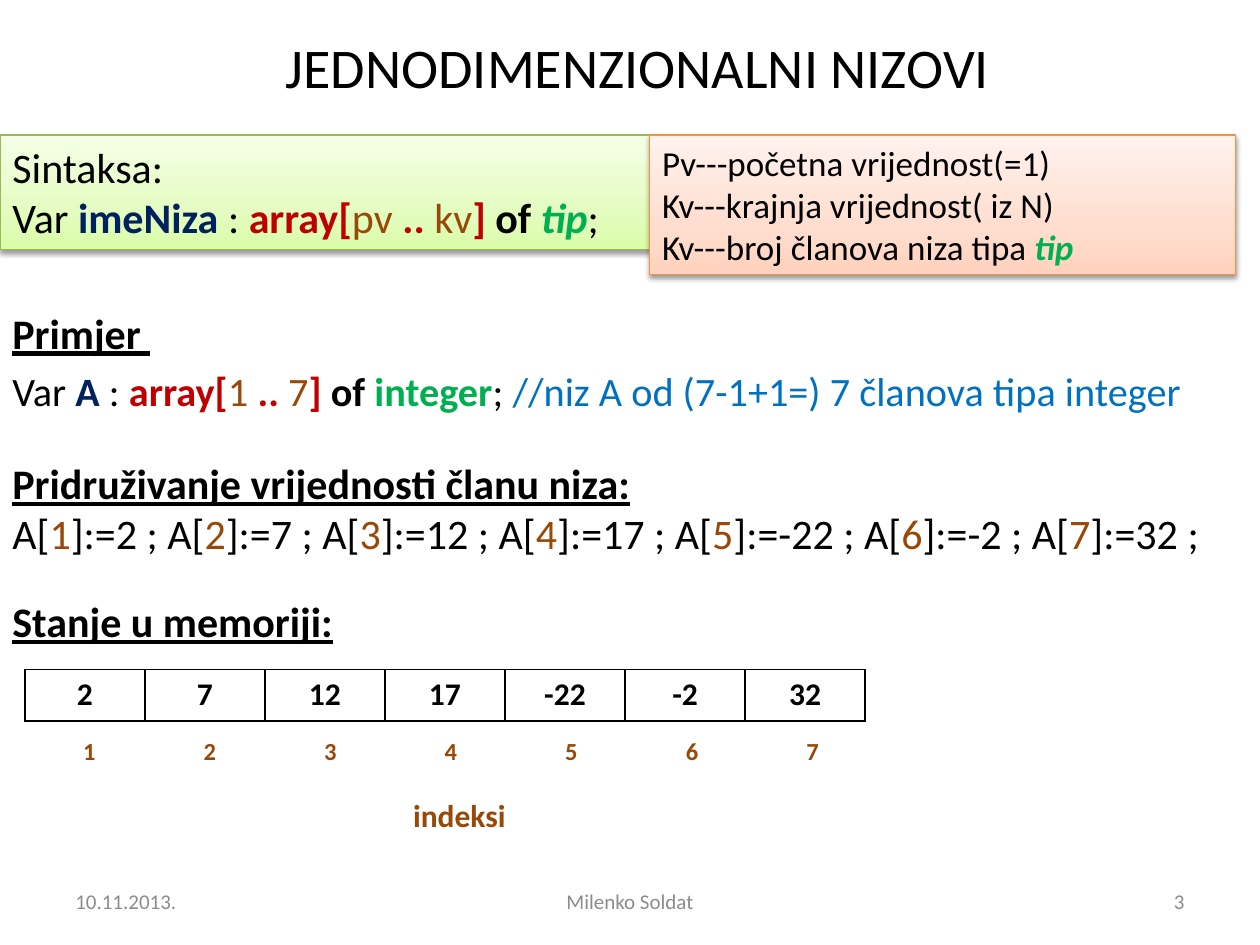
from dataclasses import dataclass

from lxml import etree
from pptx import Presentation
from pptx.dml.color import RGBColor
from pptx.enum.shapes import MSO_SHAPE
from pptx.enum.text import MSO_ANCHOR, MSO_AUTO_SIZE, PP_ALIGN
from pptx.oxml.ns import qn
from pptx.util import Cm, Pt

LEFT, CENTER, RIGHT = PP_ALIGN.LEFT, PP_ALIGN.CENTER, PP_ALIGN.RIGHT
MIDDLE, TOP = MSO_ANCHOR.MIDDLE, MSO_ANCHOR.TOP
GROW = MSO_AUTO_SIZE.SHAPE_TO_FIT_TEXT
RECTANGLE = MSO_SHAPE.RECTANGLE
TITLE_ONLY = 5


@dataclass(frozen=True)
class Theme:
    font: str = "Calibri"
    title: int = 32
    code: int = 24
    example: int = 23
    note: int = 20
    label: int = 18
    index: int = 14
    footer: int = 12
    black: str = "000000"
    gray: str = "8C8C8C"
    brown: str = "984807"
    green_line: str = "98B955"
    green_fill: tuple = ((0, "DAFDA7"), (35, "E4FCC2"), (100, "F5FFE7"))
    orange_line: str = "F69240"
    orange_fill: tuple = ((0, "FFD2BD"), (35, "FFDED0"), (100, "FFF2ED"))


THEME = Theme()

# Role of a run: colour and the letters b, i, u for bold, italic, underlined
ROLES = {
    "plain": (THEME.black, ""),
    "heading": (THEME.black, "bu"),
    "strong": (THEME.black, "b"),
    "name": ("002060", "b"),
    "keyword": ("C00000", "b"),
    "bound": (THEME.brown, ""),
    "index": (THEME.brown, "b"),
    "type": ("00B050", "b"),
    "any type": ("00B050", "bi"),
    "comment": ("0070C0", ""),
    "footer": (THEME.gray, ""),
}

VALUES = (2, 7, 12, 17, -22, -2, 32)


def format_run(run, role, size):
    color, marks = ROLES[role]
    font = run.font
    font.name, font.size = THEME.font, Pt(size)
    font.color.rgb = RGBColor.from_string(color)
    font.bold, font.italic, font.underline = "b" in marks, "i" in marks, "u" in marks


def write_text(text_frame, paragraphs, size, align=LEFT, anchor=TOP):
    """Each paragraph is a list of (text, role) runs."""
    text_frame.word_wrap = True
    text_frame.vertical_anchor = anchor
    for number, runs in enumerate(paragraphs):
        paragraph = text_frame.add_paragraph() if number else text_frame.paragraphs[0]
        paragraph.alignment = align
        for text, role in runs:
            run = paragraph.add_run()
            run.text = text
            format_run(run, role, size)


def add_text(slide, box, paragraphs, size, align=LEFT, anchor=TOP):
    shape = slide.shapes.add_textbox(*map(Cm, box))
    write_text(shape.text_frame, paragraphs, size, align, anchor)
    if anchor == TOP:
        shape.text_frame.auto_size = GROW


def add_panel(slide, box, paragraphs, size, stops, line_color):
    """Rectangle with a vertical gradient and a soft shadow below."""
    shape = slide.shapes.add_shape(RECTANGLE, *map(Cm, box))
    shape.fill.gradient()
    shape.fill.gradient_angle = 90
    stop_list = shape._element.spPr.find(".//" + qn("a:gsLst"))
    for stop in list(stop_list):
        stop_list.remove(stop)
    for position, color in stops:
        stop = etree.SubElement(stop_list, qn("a:gs"), pos=str(position * 1000))
        etree.SubElement(stop, qn("a:srgbClr"), val=color)

    shape.line.color.rgb = RGBColor.from_string(line_color)
    shape.line.width = Pt(0.75)

    shape.shadow.inherit = False
    effects = shape._element.spPr.find(qn("a:effectLst"))
    shadow = etree.SubElement(effects, qn("a:outerShdw"), blurRad=str(Pt(3.1)),
                              dist=str(Pt(1.6)), dir="5400000", rotWithShape="0")
    shadow_color = etree.SubElement(shadow, qn("a:srgbClr"), val=THEME.black)
    etree.SubElement(shadow_color, qn("a:alpha"), val="38000")

    write_text(shape.text_frame, paragraphs, size)
    shape.text_frame.auto_size = GROW


def set_borders(cell):
    properties = cell._tc.get_or_add_tcPr()
    for position, side in enumerate(("a:lnL", "a:lnR", "a:lnT", "a:lnB")):
        line = etree.Element(qn(side), w=str(Pt(1)))
        fill = etree.SubElement(line, qn("a:solidFill"))
        etree.SubElement(fill, qn("a:srgbClr"), val=THEME.black)
        properties.insert(position, line)


def add_memory_table(slide, box):
    table = slide.shapes.add_table(1, len(VALUES), *map(Cm, box)).table
    table.first_row = table.horz_banding = False
    for cell, value in zip(table.iter_cells(), VALUES):
        cell.fill.background()
        set_borders(cell)
        write_text(cell.text_frame, [[(str(value), "strong")]], THEME.label, CENTER)


def declaration(name, first, last, type_run):
    """Runs of an array declaration, up to its semicolon."""
    return [("Var ", "plain"), (name, "name"), (" : ", "plain"),
            ("array[", "keyword"), (first + " ", "bound"), (".. ", "keyword"),
            (last, "bound"), ("] ", "keyword"), ("of ", "strong"), type_run]


def assignments():
    runs = []
    lead = "A["
    for index, value in enumerate(VALUES, 1):
        runs += [(lead, "plain"), (str(index), "bound")]
        lead = f"]:={value} ; A["
    return runs + [(f"]:={VALUES[-1]} ;", "plain")]


def main():
    presentation = Presentation()
    presentation.slide_width, presentation.slide_height = Cm(25.4), Cm(19.05)
    slide = presentation.slides.add_slide(presentation.slide_layouts[TITLE_ONLY])

    # Title
    title = slide.shapes.title
    title.left, title.top, title.width, title.height = map(Cm, (1.3, 0.33, 22.86, 2))
    write_text(title.text_frame, [[(" JEDNODIMENZIONALNI NIZOVI", "plain")]],
               THEME.title, CENTER, MIDDLE)

    # Footer
    for left, width, text, align in ((1.27, 5.92, "10.11.2013.", LEFT),
                                     (8.68, 8.04, "Milenko Soldat", CENTER),
                                     (18.2, 5.93, "3", RIGHT)):
        add_text(slide, (left, 17.66, width, 1.01), [[(text, "footer")]],
                 THEME.footer, align, MIDDLE)

    # Syntax and its explanation
    any_type = ("tip", "any type")
    syntax = declaration("imeNiza", "pv", "kv", any_type) + [(";", "plain")]
    add_panel(slide, (0, 2.72, 13.1, 2.31), [[("Sintaksa:", "plain")], syntax],
              THEME.code, THEME.green_fill, THEME.green_line)
    add_panel(slide, (13.1, 2.72, 11.81, 2.82),
              [[("Pv---početna vrijednost(=1)", "plain")],
               [("Kv---krajnja vrijednost( iz N)", "plain")],
               [("Kv---broj članova niza tipa ", "plain"), any_type]],
              THEME.note, THEME.orange_fill, THEME.orange_line)

    # Example declaration
    add_text(slide, (0, 6.07, 3.56, 1.28), [[("Primjer ", "heading")]], THEME.code)
    example = declaration("A", "1", "7", ("integer", "type")) + [
        ("; ", "plain"), ("//niz A od (7-1+1=) 7 članova tipa integer", "comment")]
    add_text(slide, (0, 7.26, 25.1, 1.26), [example], THEME.example)

    # Assignments
    add_text(slide, (0, 9.1, 25.4, 2.31),
             [[("Pridruživanje vrijednosti članu niza:", "heading")], assignments()],
             THEME.code)

    # State of the memory, with the indexes below the cells
    add_text(slide, (0, 11.89, 10.9, 1.28), [[("Stanje u memoriji:", "heading")]],
             THEME.code)
    add_memory_table(slide, (0.5, 13.5, 16.94, 1.03))
    for column in range(len(VALUES)):
        add_text(slide, (1.3 + 2.43 * column, 14.71, 1, 0.86),
                 [[(str(column + 1), "index")]], THEME.index, CENTER)
    add_text(slide, (8.08, 15.93, 2.64, 1.03), [[("indeksi", "index")]], THEME.label)

    presentation.save("out.pptx")


if __name__ == "__main__":
    main()
